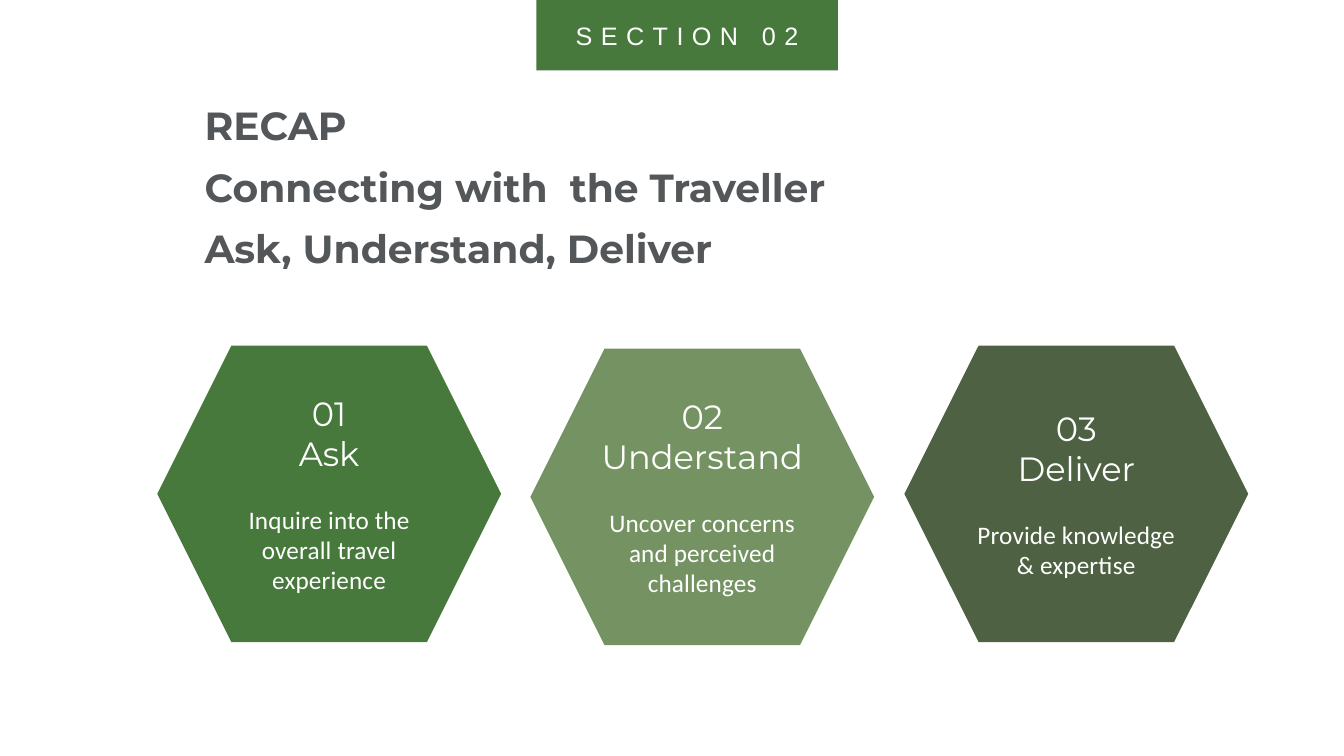
"""Build the recap slide with a section tab, a heading and three step hexagons."""
from dataclasses import dataclass

from pptx import Presentation
from pptx.dml.color import RGBColor
from pptx.enum.shapes import MSO_SHAPE as Preset
from pptx.enum.text import MSO_ANCHOR as Anchor, PP_ALIGN as Align
from pptx.shapes.autoshape import Shape
from pptx.slide import Slide
from pptx.text.text import TextFrame
from pptx.util import Inches, Pt

GREEN = RGBColor(0x47, 0x78, 0x3C)
SAGE = RGBColor(0x75, 0x92, 0x62)
OLIVE = RGBColor(0x4E, 0x61, 0x42)
GRAY = RGBColor(0x54, 0x57, 0x59)
WHITE = RGBColor(0xFF, 0xFF, 0xFF)

HEADING = ("RECAP", "Connecting with  the Traveller", "Ask, Understand, Deliver")


@dataclass(frozen=True)
class TextStyle:
    font: str
    size: int
    color: RGBColor
    bold: bool = False
    align: Align = Align.CENTER
    tracking: float = 0


@dataclass(frozen=True)
class Step:
    number: str
    title: str
    detail: str
    left: float
    top: float
    fill: RGBColor


SECTION_STYLE = TextStyle("Arial", 18, WHITE, tracking=6)
HEADING_STYLE = TextStyle("Montserrat", 28, GRAY, bold=True, align=Align.LEFT)
TITLE_STYLE = TextStyle("Montserrat", 24, WHITE)
DETAIL_STYLE = TextStyle("Calibri", 18, WHITE, tracking=0.1)

STEPS = (
    Step("01", "Ask", "Inquire into the overall travel experience", 1.56, 3.43, GREEN),
    Step("02", "Understand", "Uncover concerns and perceived challenges", 5.26, 3.46, SAGE),
    Step("03", "Deliver", "Provide knowledge & expertise", 8.97, 3.43, OLIVE),
)


def add_line(frame: TextFrame, text: str, style: TextStyle, space_before: float = 0) -> None:
    paragraph = frame.paragraphs[0]
    if paragraph.runs:
        paragraph = frame.add_paragraph()
        paragraph.space_before = Pt(space_before)
    paragraph.alignment = style.align
    run = paragraph.add_run()
    run.text = text
    if style.tracking:
        run._r.get_or_add_rPr().set("spc", str(round(style.tracking * 100)))
    font = paragraph.font
    font.name, font.size, font.bold = style.font, Pt(style.size), style.bold
    font.color.rgb = style.color


def set_insets(frame: TextFrame, inset: float) -> None:
    frame.margin_left = frame.margin_right = Inches(inset)
    frame.margin_top = frame.margin_bottom = Inches(inset)


def add_block(slide: Slide, preset: Preset, left: float, top: float,
              width: float, height: float, fill: RGBColor) -> Shape:
    shape = slide.shapes.add_shape(
        preset, Inches(left), Inches(top), Inches(width), Inches(height))
    shape.shadow.inherit = False
    shape.fill.solid()
    shape.fill.fore_color.rgb = fill
    shape.line.fill.background()
    shape.text_frame.word_wrap = True
    shape.text_frame.vertical_anchor = Anchor.MIDDLE
    return shape


def add_step(slide: Slide, step: Step) -> None:
    frame = add_block(slide, Preset.HEXAGON, step.left, step.top, 3.41, 2.94, step.fill).text_frame
    add_line(frame, step.number, TITLE_STYLE)
    add_line(frame, step.title, TITLE_STYLE)
    add_line(frame, step.detail, DETAIL_STYLE, space_before=22)


def add_heading(slide: Slide) -> None:
    box = slide.shapes.add_textbox(Inches(1.72), Inches(0.7), Inches(6.91), Inches(2.8))
    frame = box.text_frame
    frame.word_wrap = True
    set_insets(frame, 0.31)
    for text in HEADING:
        add_line(frame, text, HEADING_STYLE, space_before=10)


def add_section_tab(slide: Slide) -> None:
    frame = add_block(slide, Preset.RECTANGLE, 5.32, 0, 2.99, 0.7, GREEN).text_frame
    set_insets(frame, 0.2)
    add_line(frame, "SECTION 02", SECTION_STYLE)


def main() -> None:
    presentation = Presentation()
    presentation.slide_width = Inches(13.33)
    presentation.slide_height = Inches(7.5)
    slide = presentation.slides.add_slide(presentation.slide_layouts[6])
    for step in STEPS:
        add_step(slide, step)
    add_heading(slide)
    add_section_tab(slide)
    presentation.save("out.pptx")


if __name__ == "__main__":
    main()
